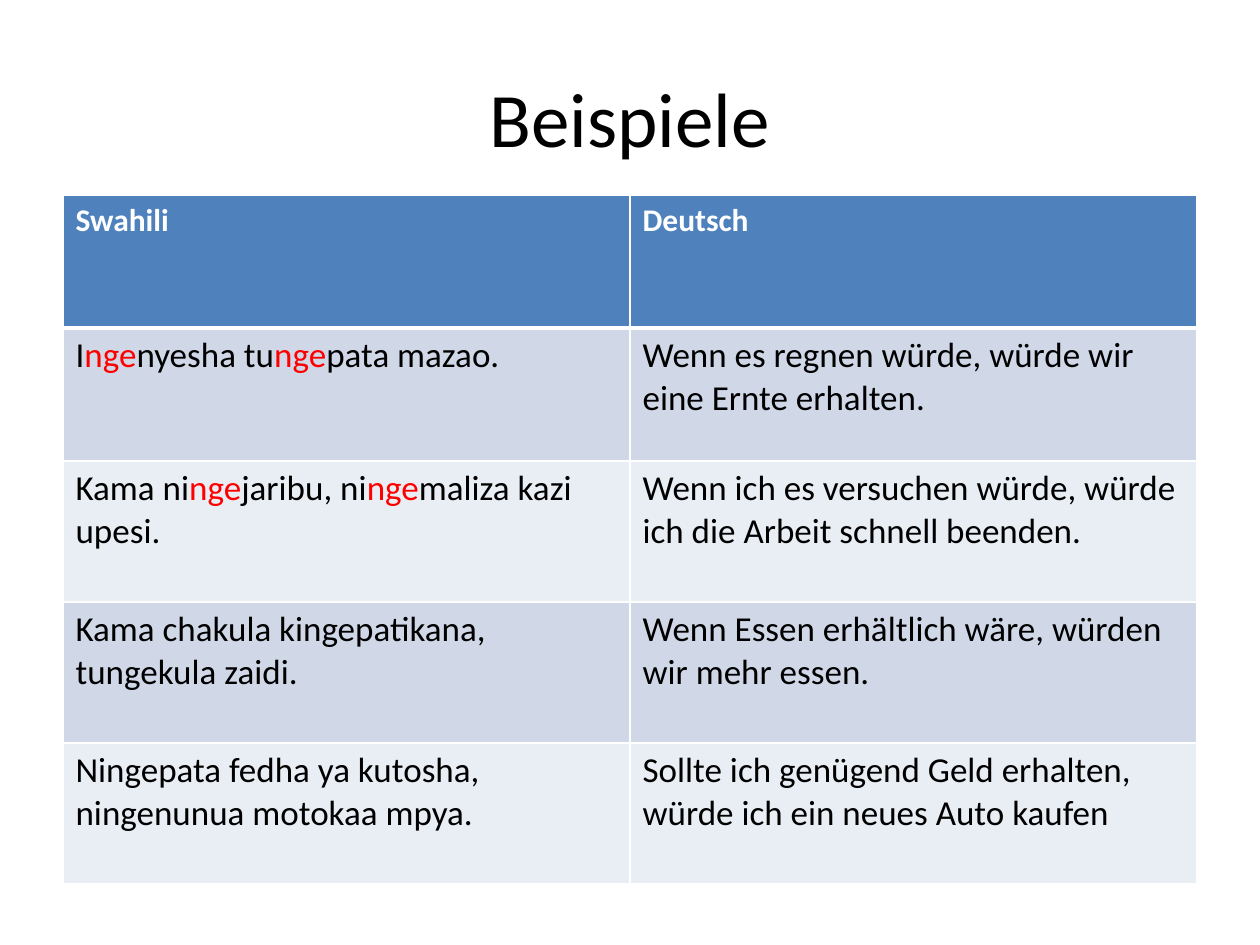
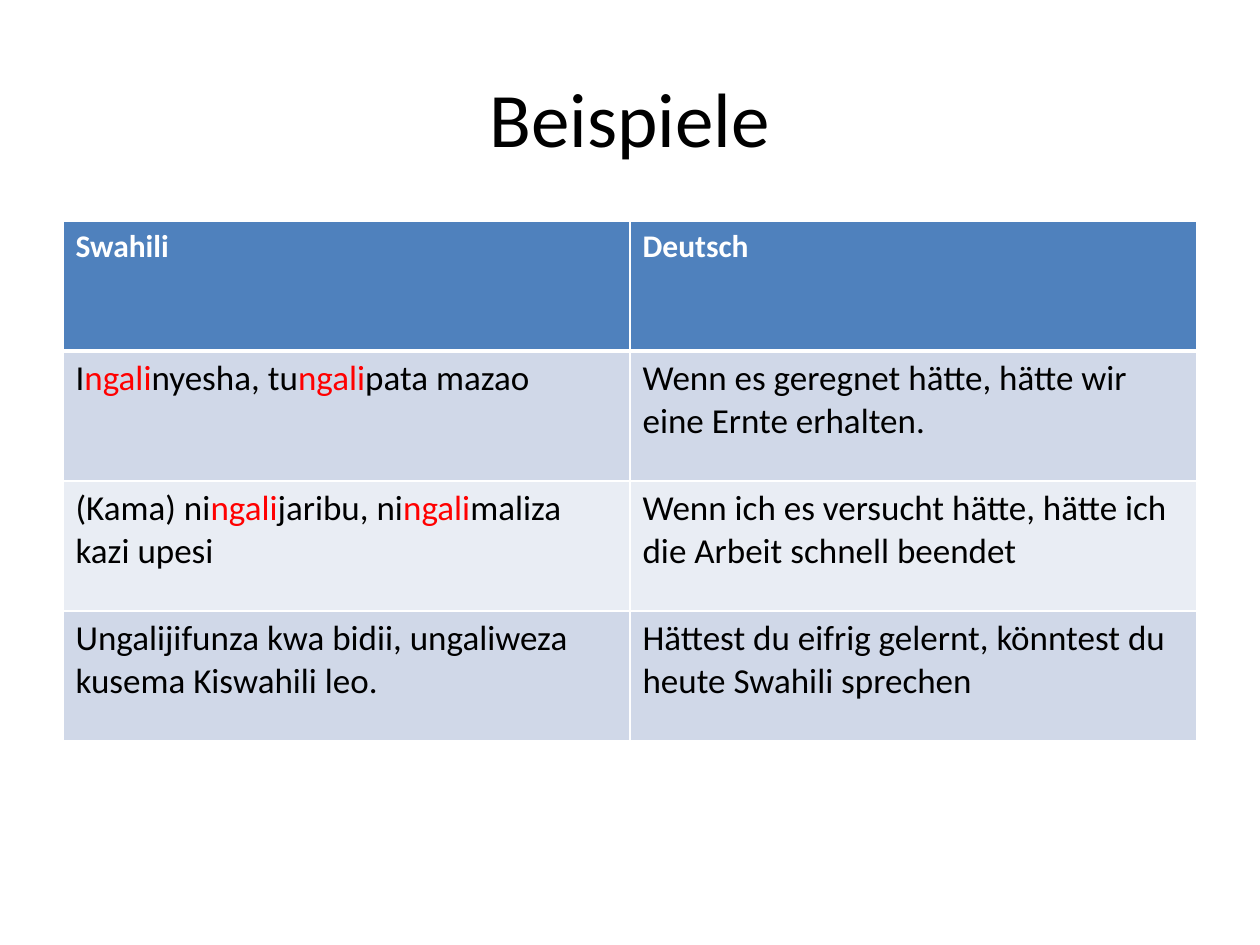
from dataclasses import dataclass
from itertools import cycle

from lxml import etree
from pptx import Presentation
from pptx.dml.color import RGBColor
from pptx.enum.text import MSO_ANCHOR, PP_ALIGN
from pptx.oxml.ns import qn
from pptx.util import Emu, Pt

MIDDLE = MSO_ANCHOR.MIDDLE
CENTER = PP_ALIGN.CENTER
EMU_PER_PX = 914400 / 126
BLANK_LAYOUT = 6
MARK = "|"


@dataclass(frozen=True)
class Theme:
    font: str = "Calibri"
    title_size: int = 44
    header_size: int = 18
    sentence_size: int = 20
    ink: str = "000000"
    highlight: str = "FF0000"
    paper: str = "FFFFFF"
    header_fill: str = "4F81BD"
    bands: tuple[str, str] = ("D0D8E8", "E9EDF4")
    rule: int = 1
    header_rule: int = 3


@dataclass(frozen=True)
class Box:
    left: int
    top: int
    width: int
    height: int


@dataclass(frozen=True)
class Example:
    swahili: str
    german: str
    height: int


@dataclass(frozen=True)
class ExampleSlide:
    table_top: int
    header_height: int
    examples: tuple[Example, ...]


THEME = Theme()
SLIDE_WIDTH, SLIDE_HEIGHT = 1260, 945
TITLE = "Beispiele"
TITLE_BOX = Box(63, 38, 1134, 157)
LANGUAGES = ("Swahili", "Deutsch")

EXAMPLE_SLIDES = (
    ExampleSlide(195, 133, (
        Example("I|nge|nyesha tu|nge|pata mazao.",
                "Wenn es regnen würde, würde wir eine Ernte erhalten.", 133),
        Example("Kama ni|nge|jaribu, ni|nge|maliza kazi upesi.",
                "Wenn ich es versuchen würde, würde ich die Arbeit schnell beenden.", 141),
        Example("Kama chakula kingepatikana, tungekula zaidi.",
                "Wenn Essen erhältlich wäre, würden wir mehr essen.", 141),
        Example("Ningepata fedha ya kutosha, ningenunua motokaa mpya.",
                "Sollte ich genügend Geld erhalten, würde ich ein neues Auto kaufen", 141),
    )),
    ExampleSlide(221, 130, (
        Example("I|ngali|nyesha, tu|ngali|pata mazao",
                "Wenn es geregnet hätte, hätte wir eine Ernte erhalten.", 130),
        Example("(Kama) ni|ngali|jaribu, ni|ngali|maliza kazi upesi",
                "Wenn ich es versucht hätte, hätte ich die Arbeit schnell beendet", 130),
        Example("Ungalijifunza kwa bidii, ungaliweza kusema Kiswahili leo.",
                "Hättest du eifrig gelernt, könntest du heute Swahili sprechen", 130),
    )),
)


def px(length: int) -> Emu:
    return Emu(round(length * EMU_PER_PX))


def apply_format(target, values: dict) -> None:
    for attribute, value in values.items():
        setattr(target, attribute, value)


def write_text(paragraph, text: str, size: int, color: str, bold: bool = False) -> None:
    for part, part_color in zip(text.split(MARK), cycle((color, THEME.highlight))):
        run = paragraph.add_run()
        run.text = part
        apply_format(run.font, {"name": THEME.font, "size": Pt(size), "bold": bold})
        run.font.color.rgb = RGBColor.from_string(part_color)


def set_borders(cell, top: int, bottom: int) -> None:
    properties = cell._tc.get_or_add_tcPr()
    widths = {"a:lnL": THEME.rule, "a:lnR": THEME.rule, "a:lnT": top, "a:lnB": bottom}
    for position, (side, width) in enumerate(widths.items()):
        line = etree.Element(qn(side), w=str(Pt(width)))
        fill = etree.SubElement(line, qn("a:solidFill"))
        etree.SubElement(fill, qn("a:srgbClr"), val=THEME.paper)
        properties.insert(position, line)


def fill_cell(cell, color: str) -> None:
    cell.fill.solid()
    cell.fill.fore_color.rgb = RGBColor.from_string(color)


def add_title(slide) -> None:
    box = TITLE_BOX
    title = slide.shapes.add_textbox(px(box.left), px(box.top), px(box.width), px(box.height))
    apply_format(title.text_frame, {"word_wrap": True, "vertical_anchor": MIDDLE})
    paragraph = title.text_frame.paragraphs[0]
    paragraph.alignment = CENTER
    write_text(paragraph, TITLE, THEME.title_size, THEME.ink)


def add_examples(slide, content: ExampleSlide) -> None:
    heights = [content.header_height, *(example.height for example in content.examples)]
    table = slide.shapes.add_table(
        len(heights), len(LANGUAGES), px(TITLE_BOX.left), px(content.table_top),
        px(TITLE_BOX.width), px(sum(heights))).table
    for row, height in zip(table.rows, heights):
        row.height = px(height)

    for cell, language in zip(table.rows[0].cells, LANGUAGES):
        write_text(cell.text_frame.paragraphs[0], language,
                   THEME.header_size, THEME.paper, bold=True)
        fill_cell(cell, THEME.header_fill)
        set_borders(cell, THEME.rule, THEME.header_rule)

    for index, (example, band) in enumerate(zip(content.examples, cycle(THEME.bands)), 1):
        top_rule = THEME.header_rule if index == 1 else THEME.rule
        for cell, sentence in zip(table.rows[index].cells, (example.swahili, example.german)):
            write_text(cell.text_frame.paragraphs[0], sentence, THEME.sentence_size, THEME.ink)
            fill_cell(cell, band)
            set_borders(cell, top_rule, THEME.rule)


def main() -> None:
    deck = Presentation()
    apply_format(deck, {"slide_width": px(SLIDE_WIDTH), "slide_height": px(SLIDE_HEIGHT)})
    for content in EXAMPLE_SLIDES:
        slide = deck.slides.add_slide(deck.slide_layouts[BLANK_LAYOUT])
        add_title(slide)
        add_examples(slide, content)
    deck.save("out.pptx")


if __name__ == "__main__":
    main()
